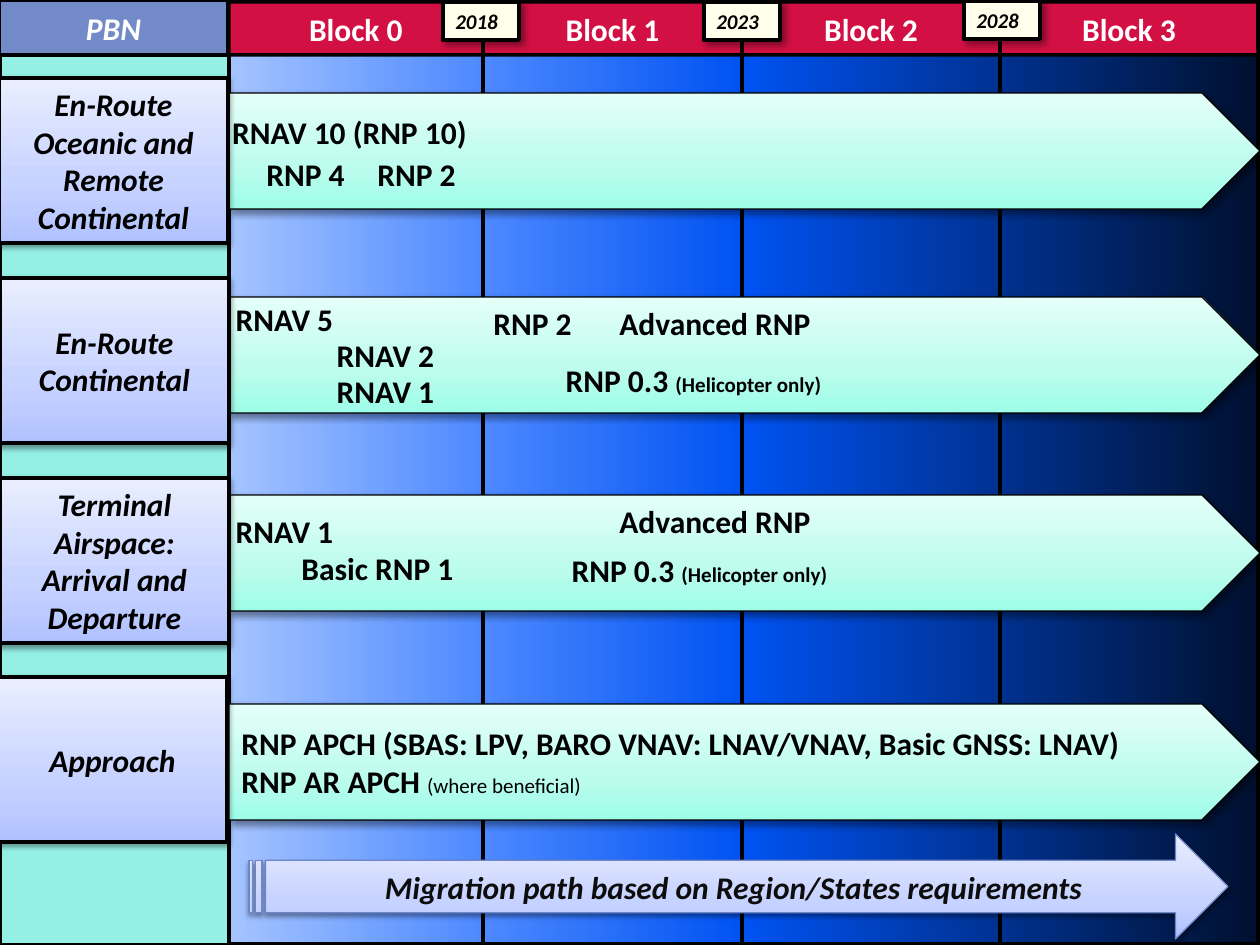
from lxml.etree import SubElement
from pptx import Presentation
from pptx.dml.color import RGBColor
from pptx.enum.shapes import MSO_SHAPE
from pptx.enum.text import MSO_ANCHOR, PP_ALIGN
from pptx.oxml.ns import qn
from pptx.util import Emu, Pt

PX = 914400 / 126
COLORS = {
    "black": "000000", "white": "FFFFFF", "ink": "0D0D0D", "page": "2C6ABA",
    "teal": "94F0E4", "slate": "738AC8", "red": "D31044", "cream": "FFFFEB",
    "edge": "6E86C6",
}
NIGHT = [(0, "A5C4FF"), (25, "4C88FF"), (50, "0052F1"), (100, "00102E")]
MINT = [(0, "9DFDE8"), (35, "BBFCED"), (100, "E4FFF9")]
LAVENDER = [(0, "B0C1FF"), (35, "C6D2FF"), (100, "E9EEFF")]
# Shadows: opacity in percent, blur and distance in points, direction in degrees
SOFT = (38, 3.1, 1.6, 90)
DEEP = (40, 4, 3, 45)

deck = Presentation()
deck.slide_width, deck.slide_height = Emu(round(1260 * PX)), Emu(round(945 * PX))
page = deck.slides.add_slide(deck.slide_layouts[6])
page.background.fill.solid()
page.background.fill.fore_color.rgb = RGBColor.from_string(COLORS["page"])


def add_box(kind, place, fill=None, line=2.25, edge="black", shadow=None, angle=90):
    """Add a shape; fill is a colour name, a list of gradient stops or None."""
    box = page.shapes.add_shape(kind, *[Emu(round(n * PX)) for n in place])
    if fill is None:
        box.fill.background()
    elif isinstance(fill, str):
        box.fill.solid()
        box.fill.fore_color.rgb = RGBColor.from_string(COLORS[fill])
    else:
        box.fill.gradient()
        box.fill.gradient_angle = angle
        stops = box.element.spPr.find(".//" + qn("a:gsLst"))
        for stop in list(stops):
            stops.remove(stop)
        for position, color in fill:
            stop = SubElement(stops, qn("a:gs"), pos=str(position * 1000))
            SubElement(stop, qn("a:srgbClr"), val=color)
    box.line.color.rgb = RGBColor.from_string(COLORS[edge])
    box.line.width = Pt(line)
    box.shadow.inherit = False
    if shadow:
        opacity, blur, distance, direction = shadow
        effects = box.element.spPr.find(qn("a:effectLst"))
        outer = SubElement(effects, qn("a:outerShdw"), blurRad=str(Pt(blur)),
                           dist=str(Pt(distance)), dir=str(direction * 60000),
                           rotWithShape="0")
        color = SubElement(outer, qn("a:srgbClr"), val=COLORS["black"])
        SubElement(color, qn("a:alpha"), val=str(opacity * 1000))
    return box


def write(box, text, size=18, color="black", italic=False, align=PP_ALIGN.CENTER,
          note="", note_bold=True):
    """Write bold lines, with an optional small note after the last one."""
    frame = box.text_frame
    frame.vertical_anchor = MSO_ANCHOR.MIDDLE
    for index, words in enumerate(text.split("\n")):
        para = frame.paragraphs[0] if index == 0 else frame.add_paragraph()
        para.alignment = align
        para.font.name, para.font.size = "Calibri", Pt(size)
        para.font.bold, para.font.italic = True, italic
        para.font.color.rgb = RGBColor.from_string(COLORS[color])
        para.add_run().text = words
    if note:
        span = para.add_run()
        span.text = note
        span.font.size, span.font.bold = Pt(12), note_bold


# Timeline background and block columns
edges = [229, 483, 742, 1000, 1258]
columns = list(zip(edges, edges[1:]))
add_box(MSO_SHAPE.RECTANGLE, (229, 0, 1031, 944), NIGHT, angle=0)
for left, right in columns:
    add_box(MSO_SHAPE.RECTANGLE, (left, 26, right - left, 919), line=2)

# Left column
add_box(MSO_SHAPE.RECTANGLE, (0, 55, 229, 890), "teal", line=2)
corner = add_box(MSO_SHAPE.RECTANGLE, (-1, 0, 229, 55), "slate")
write(corner, "PBN", color="white", italic=True)

# Phase rows: label left and top, arrow top, label
rows = [
    (-1, 78, 93, "En-Route Oceanic and Remote Continental"),
    (0, 278, 297, "En-Route Continental"),
    (0, 478, 495, "Terminal Airspace:\nArrival and Departure"),
    (-2, 677, 704, "Approach"),
]
for left, top, arrow_top, name in rows:
    arrow = add_box(MSO_SHAPE.PENTAGON, (229, arrow_top, 1031, 116), MINT,
                    line=0.75, shadow=DEEP)
    label = add_box(MSO_SHAPE.RECTANGLE, (left, top, 229, 165), LAVENDER, shadow=SOFT)
    write(label, name, italic=True)

# The approach arrow, last of the rows, holds its own text
write(arrow, "RNP APCH (SBAS: LPV, BARO VNAV: LNAV/VNAV, Basic GNSS: LNAV)\nRNP AR APCH ",
      align=PP_ALIGN.LEFT, note="(where beneficial)", note_bold=False)

# Migration arrow
migration = add_box(MSO_SHAPE.STRIPED_RIGHT_ARROW, (249, 834, 979, 105), LAVENDER,
                    line=0.75, edge="edge", shadow=SOFT)
write(migration, "Migration path based on Region/States requirements",
      color="ink", italic=True)

# Navigation specifications on the arrows: left, top, width, text, note
helicopter = "(Helicopter only)"
specifications = [
    (218, 107, 263, "RNAV 10 (RNP 10)", ""),
    (253, 149, 105, "RNP 4", ""),
    (364, 149, 105, "RNP 2", ""),
    (223, 294, 123, "RNAV 5", ""),
    (324, 330, 123, "RNAV 2", ""),
    (324, 366, 123, "RNAV 1", ""),
    (480, 298, 105, "RNP 2", ""),
    (606, 298, 218, "Advanced RNP", ""),
    (551, 355, 285, "RNP 0.3 ", helicopter),
    (223, 506, 123, "RNAV 1", ""),
    (288, 543, 179, "Basic RNP 1", ""),
    (606, 496, 218, "Advanced RNP", ""),
    (557, 545, 285, "RNP 0.3 ", helicopter),
]
for left, top, width, text, note in specifications:
    box = page.shapes.add_textbox(*[Emu(round(n * PX)) for n in (left, top, width, 50)])
    box.text_frame.word_wrap = False
    write(box, text, note=note)

# Block headers
for number, (left, right) in enumerate(columns):
    header = add_box(MSO_SHAPE.ROUNDED_RECTANGLE, (left, 2, right - left, 53), "red", line=2)
    header.adjustments[0] = 0.02
    write(header, f"Block {number}", color="white")

# Year tags
for left, top, year in [(443, 2, "2018"), (704, 2, "2023"), (964, 1, "2028")]:
    tag = add_box(MSO_SHAPE.RECTANGLE, (left, top, 76, 38), "cream", shadow=DEEP)
    write(tag, year, size=12, italic=True, align=PP_ALIGN.LEFT)

deck.save("out.pptx")
